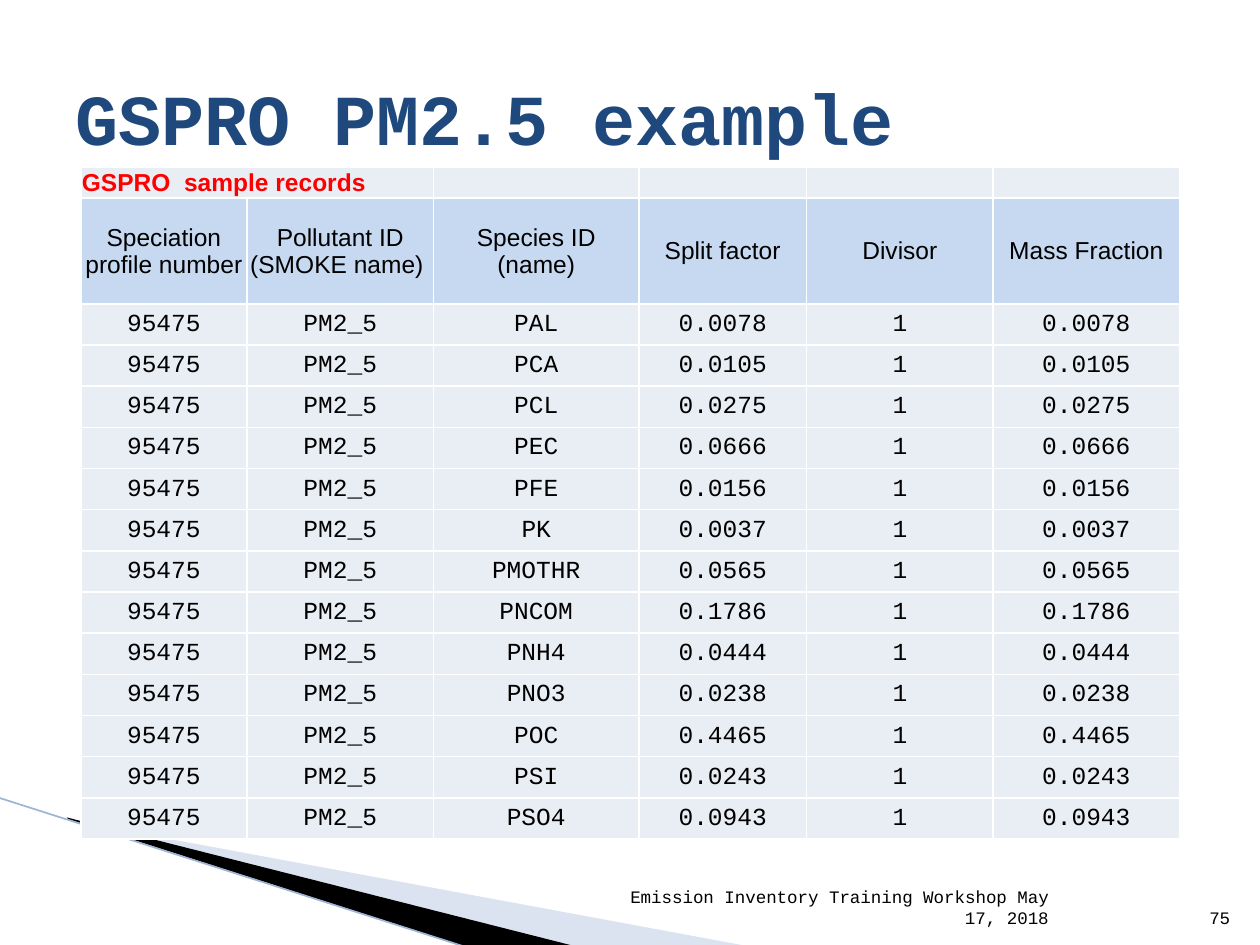
from lxml import etree
from pptx import Presentation
from pptx.dml.color import RGBColor
from pptx.enum.shapes import MSO_CONNECTOR
from pptx.enum.text import MSO_ANCHOR as Anchor, PP_ALIGN as Align
from pptx.oxml import parse_xml
from pptx.oxml.ns import nsdecls, qn
from pptx.util import Cm, Pt

NAVY = RGBColor(0x1F, 0x49, 0x7D)
BLACK = RGBColor(0x00, 0x00, 0x00)
RED = RGBColor(0xFF, 0x00, 0x00)
WEDGE_BLUE = RGBColor(0xA7, 0xB9, 0xDB)
LINE_BLUE = RGBColor(0x9E, 0xB3, 0xD6)
HEADER_FILL = RGBColor(0xC6, 0xD9, 0xF1)
BODY_FILL = RGBColor(0xE9, 0xED, 0xF4)
MONO, SANS = "Courier New", "Arial"

CAPTION = "GSPRO  sample records"
HEADERS = ["Speciation profile number", "Pollutant ID (SMOKE name) ",
           "Species ID (name)", "Split factor", "Divisor", "Mass Fraction"]
FRACTIONS = [
    ("PAL", "0.0078"), ("PCA", "0.0105"), ("PCL", "0.0275"),
    ("PEC", "0.0666"), ("PFE", "0.0156"), ("PK", "0.0037"),
    ("PMOTHR", "0.0565"), ("PNCOM", "0.1786"), ("PNH4", "0.0444"),
    ("PNO3", "0.0238"), ("POC", "0.4465"), ("PSI", "0.0243"),
    ("PSO4", "0.0943"),
]
COL_WIDTHS = [3.35, 3.76, 4.14, 3.38, 3.76, 3.76]
CAPTION_HEIGHT, HEADER_HEIGHT, ROW_HEIGHT = 0.23, 2.13, 0.83


def set_font(p, name, size, color, bold=False):
    f = p.font
    f.name, f.size, f.bold = name, Pt(size), bold
    f.color.rgb = color


def add_wedge(slide, points, color, alpha=None):
    """Filled outline through points in cm; alpha is opacity in percent."""
    start, *rest = [(Cm(x), Cm(y)) for x, y in points]
    builder = slide.shapes.build_freeform(*start)
    builder.add_line_segments(rest)
    sp = builder.convert_to_shape()
    sp.shadow.inherit = False
    sp.fill.solid()
    sp.fill.fore_color.rgb = color
    sp.line.fill.background()
    if alpha is not None:
        clr = sp.fill._xPr.find(qn("a:solidFill"))[0]
        etree.SubElement(clr, qn("a:alpha"), val=str(alpha * 1000))


def add_line(slide, x1, y1, x2, y2):
    line = slide.shapes.add_connector(
        MSO_CONNECTOR.STRAIGHT, Cm(x1), Cm(y1), Cm(x2), Cm(y2))
    line.line.color.rgb = LINE_BLUE
    line.line.width = Pt(0.95)
    etree.SubElement(line._element.spPr, qn("a:effectLst"))


def add_footer_text(slide, text, left, width):
    sp = slide.shapes.add_textbox(Cm(left), Cm(17.81), Cm(width), Cm(1.02))
    tf = sp.text_frame
    tf.word_wrap = True
    tf.vertical_anchor = Anchor.BOTTOM
    p = tf.paragraphs[0]
    p.text = text
    p.alignment = Align.RIGHT
    set_font(p, MONO, 10, BLACK)


def set_title(slide, text):
    sp = slide.shapes.title
    sp.left, sp.top, sp.width, sp.height = Cm(1.27), Cm(0.76), Cm(22.86), Cm(3.18)
    tf = sp.text_frame
    tf.vertical_anchor = Anchor.MIDDLE
    p = tf.paragraphs[0]
    p.text = text
    p.alignment = Align.LEFT
    set_font(p, MONO, 41, NAVY, bold=True)


def format_cell(cell, fill):
    """White borders, thin margins and a solid fill."""
    tc_pr = cell._tc.get_or_add_tcPr()
    for side in "LRTB":
        tc_pr.append(parse_xml(
            f'<a:ln{side} {nsdecls("a")} w="12700"><a:solidFill>'
            f'<a:srgbClr val="FFFFFF"/></a:solidFill></a:ln{side}>'))
    cell.fill.solid()
    cell.fill.fore_color.rgb = fill
    cell.margin_left = cell.margin_right = cell.margin_top = Cm(0.02)
    cell.margin_bottom = 0
    cell.vertical_anchor = Anchor.MIDDLE


def fill_row(cells, texts, fill, font, color=BLACK, bold=False, align=Align.CENTER):
    for cell, text in zip(cells, texts):
        format_cell(cell, fill)
        p = cell.text_frame.paragraphs[0]
        p.alignment = align
        set_font(p, font, 14, color, bold)
        if text:
            p.text = text
        else:  # an empty cell takes its line height from the end mark
            p._p.get_or_add_endParaRPr().set("sz", "1400")


def add_profile_table(slide):
    heights = [CAPTION_HEIGHT, HEADER_HEIGHT] + [ROW_HEIGHT] * len(FRACTIONS)
    table = slide.shapes.add_table(
        len(heights), len(COL_WIDTHS), Cm(1.63), Cm(3.38),
        Cm(sum(COL_WIDTHS)), Cm(sum(heights))).table
    table.first_row = table.horz_banding = False
    for col, width in zip(table.columns, COL_WIDTHS):
        col.width = Cm(width)
    for row, height in zip(table.rows, heights):
        row.height = Cm(height)

    caption, header, *body = [row.cells for row in table.rows]
    fill_row(caption, [CAPTION] + [""] * 5, BODY_FILL, SANS, RED, True, Align.LEFT)
    table.cell(0, 0).merge(table.cell(0, 1))
    fill_row(header, HEADERS, HEADER_FILL, SANS)
    for cells, (species, factor) in zip(body, FRACTIONS):
        fill_row(cells, ["95475", "PM2_5", species, factor, "1", factor],
                 BODY_FILL, MONO)


def main():
    prs = Presentation()
    prs.slide_width, prs.slide_height = Cm(25.4), Cm(19.05)
    slide = prs.slides.add_slide(prs.slide_layouts[5])
    add_wedge(slide, [(1.4, 16.54), (15.11, 19.08), (11.58, 19.08), (1.4, 16.51)],
              WEDGE_BLUE, alpha=40)
    add_wedge(slide, [(1.35, 16.48), (11.61, 19.08), (9.45, 19.1), (1.37, 16.51)],
              BLACK)
    add_line(slide, -0.03, 16.08, 9.42, 19.1)
    add_footer_text(slide, "Emission Inventory Training Workshop May 17, 2018",
                    12.17, 9.22)
    add_footer_text(slide, "75", 24.03, 1.02)
    set_title(slide, "GSPRO PM2.5 example")
    add_profile_table(slide)
    prs.save("out.pptx")


if __name__ == "__main__":
    main()
